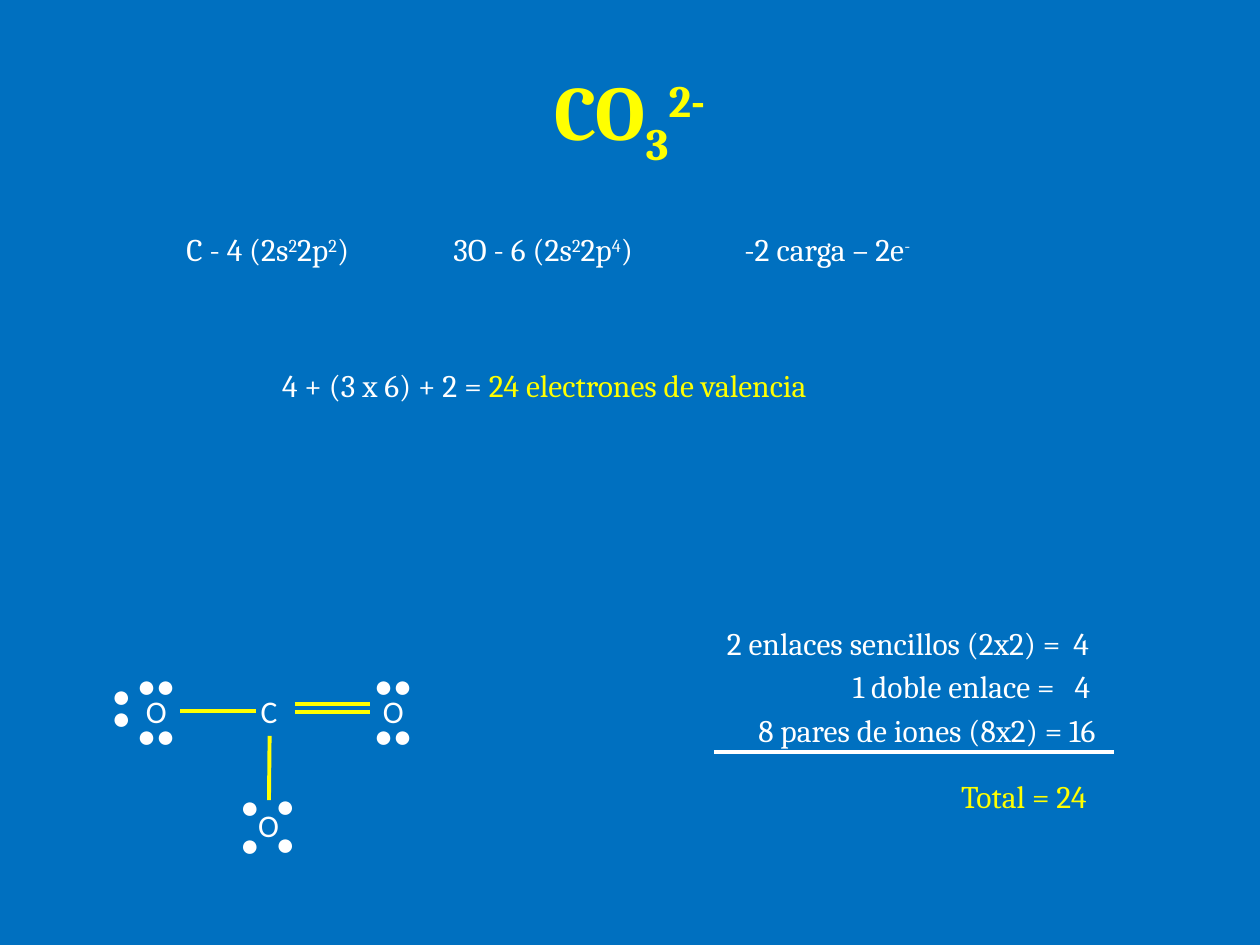
from dataclasses import dataclass

from lxml import etree
from pptx import Presentation
from pptx.dml import color
from pptx.enum import shapes, text
from pptx.oxml import ns
from pptx.util import Inches, Pt

SLIDE_WIDTH, SLIDE_HEIGHT = Inches(10), Inches(7.5)
COLUMN, ROW = SLIDE_WIDTH / 100, SLIDE_HEIGHT / 75
SUBSCRIPT, SUPERSCRIPT = -25, 30
LINE_HEIGHT = 4


@dataclass(frozen=True)
class Theme:
    background: str = "0070C0"
    body: str = "FFFFFF"
    accent: str = "FFFF00"
    serif: str = "Cambria"
    atom: str = "Calibri"
    dots: str = "Times New Roman"
    title_size: int = 44
    body_size: int = 18
    line_width: float = 2.25


THEME = Theme()


@dataclass(frozen=True)
class Box:
    column: float
    row: float
    columns: float
    rows: float = LINE_HEIGHT

    def area(self, column, row, columns, rows=LINE_HEIGHT):
        return Box(self.column + column, self.row + row, columns, rows)

    def point(self, column, row):
        return int((self.column + column) * COLUMN), int((self.row + row) * ROW)


def rgb(value):
    return color.RGBColor.from_string(value)


def add_text(slide, box, content, *, font=THEME.serif, size=THEME.body_size,
             fill=THEME.body, bold=False, wrap=False, align=text.PP_ALIGN.LEFT,
             anchor=text.MSO_ANCHOR.TOP, grow=True, tab=None):
    shape = slide.shapes.add_textbox(
        *box.point(0, 0), int(box.columns * COLUMN), int(box.rows * ROW))
    frame = shape.text_frame
    frame.word_wrap = wrap
    frame.vertical_anchor = anchor
    if grow:
        frame.auto_size = text.MSO_AUTO_SIZE.SHAPE_TO_FIT_TEXT
    lines = content.split("\n") if isinstance(content, str) else [content]
    for index, line in enumerate(lines):
        paragraph = frame.add_paragraph() if index else frame.paragraphs[0]
        paragraph.alignment = align
        if tab is not None:
            tabs = etree.SubElement(paragraph._p.get_or_add_pPr(), ns.qn("a:tabLst"))
            etree.SubElement(tabs, ns.qn("a:tab"), pos=str(int(tab * COLUMN)), algn="l")
        for piece in [line] if isinstance(line, str) else line:
            words, style = (piece, None) if isinstance(piece, str) else piece
            run = paragraph.add_run()
            run.text = words
            run.font.name = font
            run.font.size = Pt(size)
            run.font.bold = bold
            run.font.color.rgb = rgb(style if isinstance(style, str) else fill)
            if isinstance(style, int):
                run._r.get_or_add_rPr().set("baseline", str(style * 1000))
    return shape


def add_line(slide, box, start, end, fill):
    line = slide.shapes.add_connector(
        shapes.MSO_CONNECTOR.STRAIGHT, *box.point(*start), *box.point(*end))
    line.line.color.rgb = rgb(fill)
    line.line.width = Pt(THEME.line_width)
    etree.SubElement(line._element.spPr, ns.qn("a:effectLst"))
    return line


def add_title(slide, box):
    add_text(slide, box, ["CO", ("3", SUBSCRIPT), ("2-", SUPERSCRIPT)],
             size=THEME.title_size, fill=THEME.accent, bold=True, wrap=True,
             align=text.PP_ALIGN.CENTER, anchor=text.MSO_ANCHOR.MIDDLE, grow=False)


def add_electron_count(slide, box):
    squared = ("2", SUPERSCRIPT)
    sources = [
        (0, 15.8, ["C - 4 (2s", squared, "2p", squared, ")"]),
        (21.2, 17.9, ["3O - 6 (2s", squared, "2p", ("4", SUPERSCRIPT), ")"]),
        (44.3, 16.3, ["-2 carga – 2e", ("-", SUPERSCRIPT)]),
    ]
    for column, columns, content in sources:
        add_text(slide, box.area(column, 0, columns), content)
    add_text(slide, box.area(7.6, 10.8, 44.8),
             ["4 + (3 x 6) + 2 = ", ("24 electrones de valencia", THEME.accent)])


def add_pair_total(slide, box):
    add_text(slide, box.area(0, 0, 32.5), "2 enlaces sencillos (2x2) =\t4",
             wrap=True, tab=27.5)
    add_text(slide, box.area(10, 3.45, 26.7), "1 doble enlace =\t4",
             wrap=True, tab=17.6)
    add_text(slide, box.area(2.5, 6.9, 29.3), "8 pares de iones (8x2) = 16")
    add_line(slide, box, (0, 10.7), (box.columns, 10.7), THEME.body)
    add_text(slide, box.area(18.6, 12.2, 12.4), "Total = 24", fill=THEME.accent)


def add_lewis_structure(slide, box):
    atoms = {
        "carbon": ("C", 11.8, 2, 3.4),
        "left": ("O", 2.7, 2, 3.7),
        "right": ("O", 21.5, 2, 3.7),
        "bottom": ("O", 11.6, 11.1, 3.7),
    }
    placed = {
        name: add_text(slide, box.area(column, row, columns), symbol, font=THEME.atom)
        for name, (symbol, column, row, columns) in atoms.items()
    }

    for row in (3.5, 4.1):
        add_line(slide, box, (15.5, row), (21.5, row), THEME.accent)
    down = add_line(slide, box, (13.5, 6), (13.5, 11.1), THEME.accent)
    down.begin_connect(placed["carbon"], 2)
    down.end_connect(placed["bottom"], 0)
    across = add_line(slide, box, (6.4, 4), (12.4, 4), THEME.accent)
    across.begin_connect(placed["left"], 3)

    for column in (2, 20.8):
        for row in (0, 3.9):
            add_text(slide, box.area(column, row, 5.1), "●●", font=THEME.dots)
    for row in (0.8, 2.5):
        add_text(slide, box.area(0, row, 3.5), "●", font=THEME.dots)
    for column, row in ((10.2, 9.6), (13, 9.5)):
        add_text(slide, box.area(column, row, 3.5, 7.1), "●\n●", font=THEME.dots)


def main():
    presentation = Presentation()
    presentation.slide_width, presentation.slide_height = SLIDE_WIDTH, SLIDE_HEIGHT
    slide = presentation.slides.add_slide(presentation.slide_layouts[6])
    slide.background.fill.solid()
    slide.background.fill.fore_color.rgb = rgb(THEME.background)

    add_title(slide, Box(5, 3, 90, 12.5))
    add_electron_count(slide, Box(13.8, 17.8, 60.6, 14.8))
    add_pair_total(slide, Box(56.7, 49, 31.7, 16.2))
    add_lewis_structure(slide, Box(7.9, 52.4, 25.9, 16.7))
    presentation.save("out.pptx")


if __name__ == "__main__":
    main()
